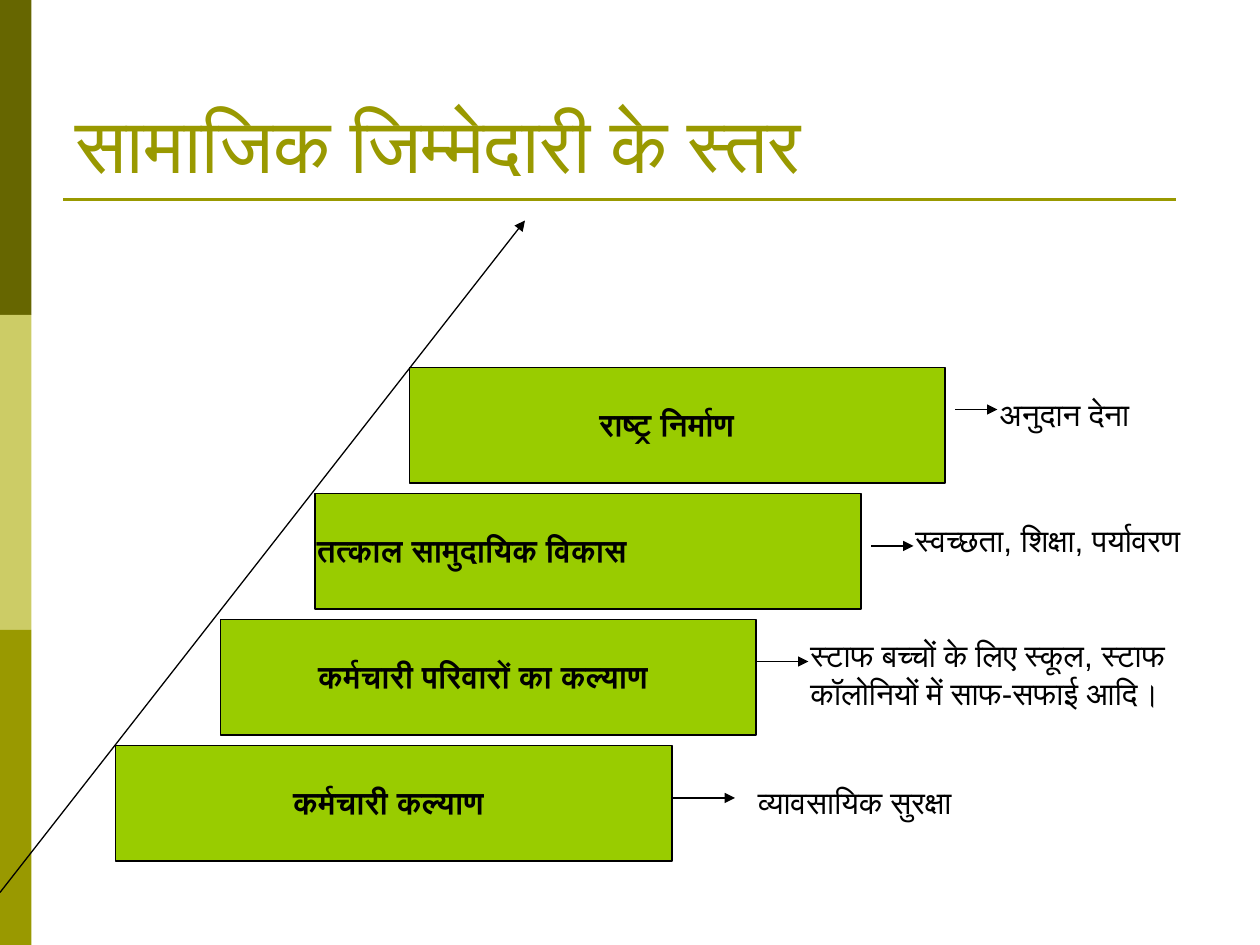
from lxml.etree import SubElement
from pptx import Presentation
from pptx.dml.color import RGBColor
from pptx.enum.shapes import MSO_CONNECTOR, MSO_SHAPE
from pptx.enum.text import MSO_ANCHOR, MSO_AUTO_SIZE as AUTO, PP_ALIGN as ALIGN
from pptx.oxml.ns import qn
from pptx.util import Pt

COLORS = {
    "dark": "666600", "light": "CCCC66", "olive": "999900",
    "bar": "99CC00", "ink": "000000",
}
TITLE = "सामाजिक जिम्मेदारी के स्तर"

# Levels from bottom to top: horizontal places are (left, width),
# the arrow is (start, end, y), the note is (left, top, width, height).
LEVELS = [
    dict(label="कर्मचारी कल्याण", bar=(66, 318), label_at=(84, 276),
         align=ALIGN.CENTER, arrow=(384, 420, 456),
         note="व्यावसायिक सुरक्षा", note_at=(426, 444, 264, 29)),
    dict(label="कर्मचारी परिवारों का कल्याण", bar=(126, 306), label_at=(144, 264),
         align=ALIGN.CENTER, arrow=(432, 462, 378),
         note="स्टाफ बच्चों के लिए स्कूल, स्टाफ कॉलोनियों में साफ-सफाई आदि।",
         note_at=(456, 360, 264, 50)),
    dict(label="तत्काल सामुदायिक विकास", bar=(180, 312), label_at=(174, 330),
         align=ALIGN.LEFT, arrow=(498, 522, 312),
         note="स्वच्छता, शिक्षा, पर्यावरण", note_at=(516, 294, 204, 50)),
    dict(label="राष्ट्र निर्माण", bar=(234, 306), label_at=(228, 306),
         align=ALIGN.CENTER, arrow=(546, 570, 234),
         note="अनुदान देना", note_at=(564, 222, 132, 29)),
]
BOTTOM_BAR_TOP, BAR_HEIGHT, BAR_PITCH = 426, 66, 72
LABEL_OFFSET, LABEL_HEIGHT = 18, 29
BAND_WIDTH, BAND_HEIGHT = 18, 180

deck = Presentation()
deck.slide_width, deck.slide_height = Pt(720), Pt(540)
page = deck.slides.add_slide(deck.slide_layouts[5])


def rgb(name):
    return RGBColor.from_string(COLORS[name])


def add_block(left, top, width, height, fill, outlined=False):
    block = page.shapes.add_shape(
        MSO_SHAPE.RECTANGLE, Pt(left), Pt(top), Pt(width), Pt(height))
    block.shadow.inherit = False
    block.fill.solid()
    block.fill.fore_color.rgb = rgb(fill)
    if outlined:
        block.line.color.rgb = rgb("ink")
        block.line.width = Pt(0.75)
    else:
        block.line.fill.background()


def add_line(x1, y1, x2, y2, color="ink", width=0.75, arrow=True):
    line = page.shapes.add_connector(
        MSO_CONNECTOR.STRAIGHT, Pt(x1), Pt(y1), Pt(x2), Pt(y2))
    line.line.color.rgb = rgb(color)
    line.line.width = Pt(width)
    if arrow:
        SubElement(line.line._get_or_add_ln(), qn("a:tailEnd"), type="triangle")
    SubElement(line._element.spPr, qn("a:effectLst"))


def write(box, text, size=18, font="Arial", color="ink", bold=False,
          align=ALIGN.LEFT, anchor=MSO_ANCHOR.TOP, auto_size=AUTO.SHAPE_TO_FIT_TEXT):
    frame = box.text_frame
    frame.word_wrap = True
    frame.auto_size = auto_size
    frame.vertical_anchor = anchor
    para = frame.paragraphs[0]
    para.alignment = align
    span = para.add_run()
    span.text = text
    span.font.size, span.font.name, span.font.bold = Pt(size), font, bold
    span.font.color.rgb = rgb(color)


def add_text(left, top, width, height, text, **style):
    box = page.shapes.add_textbox(Pt(left), Pt(top), Pt(width), Pt(height))
    write(box, text, **style)


# Side band and title rule
for index, shade in enumerate(("dark", "light", "olive")):
    add_block(0, index * BAND_HEIGHT, BAND_WIDTH, BAND_HEIGHT, shade)
add_line(36, 114, 672, 114, color="olive", width=1.5, arrow=False)

# Title
title = page.shapes.title
title.left, title.top, title.width, title.height = Pt(36), Pt(21.6), Pt(648), Pt(90)
write(title, TITLE, size=44, font="Times New Roman", color="olive",
      anchor=MSO_ANCHOR.BOTTOM, auto_size=AUTO.NONE)

# Staircase of levels, each with its arrow and example
for index, level in enumerate(LEVELS):
    top = BOTTOM_BAR_TOP - index * BAR_PITCH
    left, width = level["bar"]
    add_block(left, top, width, BAR_HEIGHT, "bar", outlined=True)
    left, width = level["label_at"]
    add_text(left, top + LABEL_OFFSET, width, LABEL_HEIGHT, level["label"],
             bold=True, align=level["align"])
    start, end, y = level["arrow"]
    add_line(start, y, end, y)
    add_text(*level["note_at"], level["note"])

# Rising arrow along the steps
add_line(0, 510, 300, 126)

deck.save("out.pptx")
